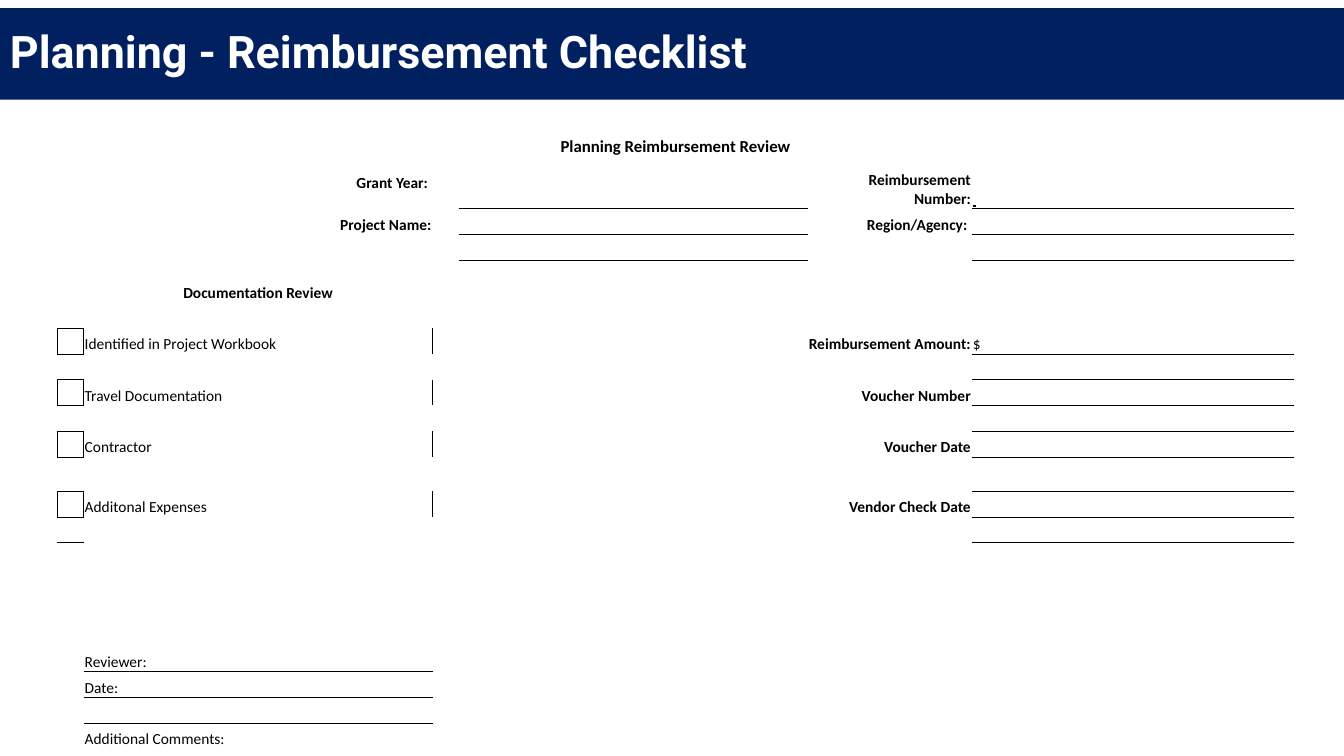
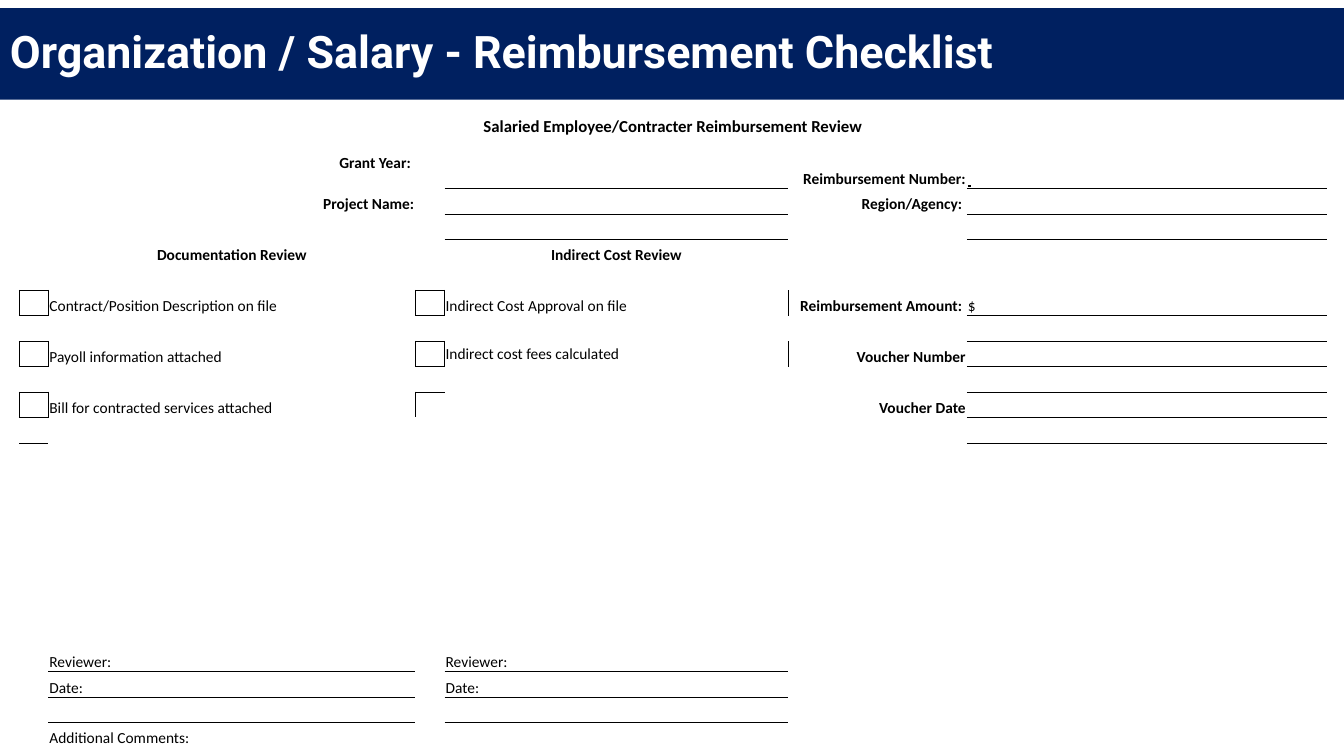
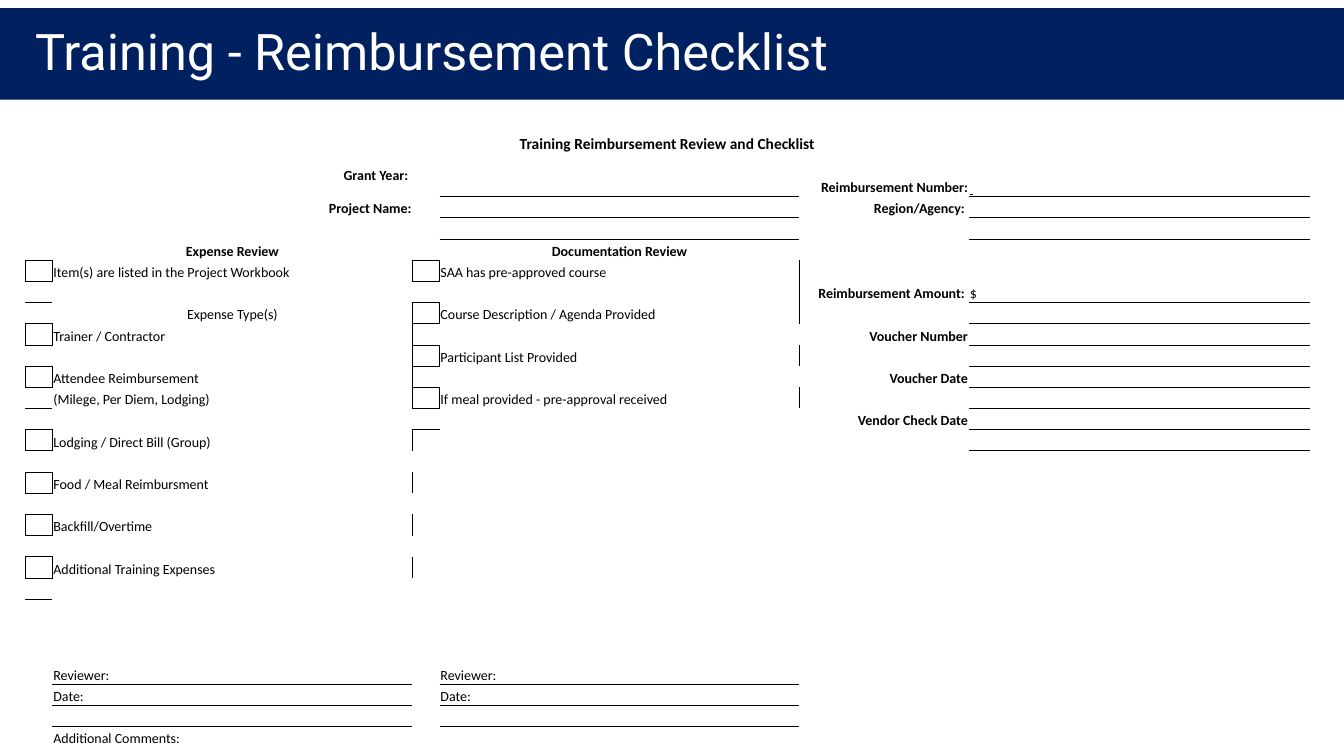
from collections import defaultdict

from lxml.etree import SubElement
from pptx import Presentation
from pptx.dml.color import RGBColor
from pptx.enum.shapes import MSO_SHAPE as Shape
from pptx.enum.text import MSO_ANCHOR as Anchor, PP_ALIGN as Align
from pptx.oxml.ns import qn
from pptx.util import Inches, Pt

NAVY = RGBColor(0x00, 0x20, 0x60)
WHITE = RGBColor(0xFF, 0xFF, 0xFF)
BLACK = RGBColor(0x00, 0x00, 0x00)
TITLE_FONT, FORM_FONT = "Roboto", "Calibri"
BAND_TOP, BAND_HEIGHT = 0.08, 0.91
NO_STYLE_ID = "{2D5ABB26-0587-4C30-8999-92F81FD0307C}"

# Table columns: check box, label, check box, label, field name, field value
BOX_COLUMNS = (0, 2)
LABEL_COLUMNS = (1, 3)
NAME, VALUE = 4, 5
AMOUNT_ROW, FIRST_FIELD_ROW, FIELD_STEP = 5, 8, 2

# "heights" holds the rows that differ; the others share what is left.
# "sections" holds, for each label column, its heading and (row, label) checks.
FORMS = [
    dict(
        title="Planning - Reimbursement Checklist",
        title_left=0, title_width=13.54, title_size=32, title_bold=True,
        heading="Planning Reimbursement Review", heading_size=12, size=11,
        at=(0.57, 1.29), height=6.14, rows=22,
        columns=(0.26, 3.46, 0.26, 3.46, 1.63, 3.19),
        heights={0: 0.27, 1: 0.51, 4: 0.42, 11: 0.34},
        sections=[
            ("Documentation Review", [
                (6, "Identified in Project Workbook"),
                (8, "Travel Documentation"),
                (10, "Contractor"),
                (12, "Additonal Expenses")]),
        ],
        fields=["Voucher Number", "Voucher Date", "Vendor Check Date"],
    ),
    dict(
        title="Organization / Salary - Reimbursement Checklist",
        title_left=0, title_width=13.54, title_size=32, title_bold=True,
        heading="Salaried Employee/Contracter Reimbursement Review",
        heading_size=12, size=11,
        at=(0.19, 1.09), height=6.34, rows=24,
        columns=(0.29, 3.64, 0.29, 3.41, 1.77, 3.57),
        heights={0: 0.27, 1: 0.51},
        sections=[
            ("Documentation Review", [
                (6, "Contract/Position Description on file"),
                (8, "Payoll information attached"),
                (10, "Bill for contracted services attached")]),
            ("Indirect Cost Review", [
                (6, "Indirect Cost Approval on file"),
                (8, "Indirect cost fees calculated")]),
        ],
        middle=[(8, 3)],
        fields=["Voucher Number", "Voucher Date"],
    ),
    dict(
        title="Training - Reimbursement Checklist",
        title_left=0.25, title_width=13.08, title_size=36, title_bold=False,
        heading="Training Reimbursement Review and Checklist",
        heading_size=11, size=10,
        at=(0.25, 1.31), height=6.11, rows=28,
        columns=(0.27, 3.57, 0.27, 3.57, 1.68, 3.38),
        heights={0: 0.22, 1: 0.42},
        sections=[
            ("Expense Review", [
                (5, "Item(s) are listed in the Project Workbook"),
                (8, "Trainer / Contractor"),
                (10, "Attendee Reimbursement"),
                (13, "Lodging / Direct Bill (Group)"),
                (15, "Food / Meal Reimbursment"),
                (17, "Backfill/Overtime"),
                (19, "Additional Training Expenses")]),
            ("Documentation Review", [
                (5, "SAA has pre-approved course"),
                (7, "Course Description / Agenda Provided"),
                (9, "Participant List Provided"),
                (11, "If meal provided - pre-approval received")]),
        ],
        plain=[(7, "Expense Type(s)", Align.CENTER),
               (11, "(Milege, Per Diem, Lodging)", Align.LEFT)],
        fields=["Voucher Number", "Voucher Date", "Vendor Check Date"],
    ),
]


def write(frame, text, *, size, font=FORM_FONT, color=BLACK, bold=False,
          underline=False, align=Align.LEFT):
    """Put one formatted paragraph in a text frame and return it."""
    para = frame.paragraphs[0]
    para.alignment = align
    span = para.add_run()
    span.text = text
    span.font.name, span.font.size = font, Pt(size)
    span.font.bold, span.font.underline = bold, underline
    span.font.color.rgb = color
    return para


def add_title(page, form):
    band = page.shapes.add_shape(Shape.RECTANGLE, 0, Inches(BAND_TOP),
                                 Inches(13.33), Inches(BAND_HEIGHT))
    band.shadow.inherit = False
    band.fill.solid()
    band.fill.fore_color.rgb = NAVY
    band.line.fill.background()

    box = page.shapes.add_textbox(
        Inches(form["title_left"]), Inches(BAND_TOP),
        Inches(form["title_width"]), Inches(BAND_HEIGHT))
    box.text_frame.word_wrap = True
    box.text_frame.vertical_anchor = Anchor.MIDDLE
    para = write(box.text_frame, form["title"], size=form["title_size"],
                 font=TITLE_FONT, color=WHITE, bold=form["title_bold"])
    para.line_spacing = 0.9


def add_grid(page, form):
    """Add the empty table with its row heights and column widths."""
    rows, heights = form["rows"], form["heights"]
    left, top = form["at"]
    frame = page.shapes.add_table(
        rows, len(form["columns"]), Inches(left), Inches(top),
        Inches(sum(form["columns"])), Inches(form["height"]))
    table = frame.table
    table.first_row = table.horz_banding = False
    table._tbl.tblPr.find(qn("a:tableStyleId")).text = NO_STYLE_ID

    for column, width in zip(table.columns, form["columns"]):
        column.width = Inches(width)
    regular = (form["height"] - sum(heights.values())) / (rows - len(heights))
    for index, row in enumerate(table.rows):
        row.height = Inches(heights.get(index, regular))

    for cell in table.iter_cells():
        cell.margin_left = cell.margin_right = cell.margin_top = Inches(0.01)
        cell.margin_bottom = 0
        cell.vertical_anchor = Anchor.BOTTOM
        cell.fill.background()
    return table


def draw_borders(table, boxes, lines):
    """Rule check boxes all round and lines below, on both cells of an edge."""
    edges = defaultdict(set)
    for row, col in boxes + lines:
        edges[row, col].add("B")
        edges[row + 1, col].add("T")
    for row, col in boxes:
        edges[row, col].update("LRT")
        edges[row - 1, col].add("B")
        edges[row, col + 1].add("L")
        if col:
            edges[row, col - 1].add("R")
    for (row, col), sides in edges.items():
        props = table.cell(row, col)._tc.get_or_add_tcPr()
        for index, side in enumerate(sorted(sides, key="LRTB".index)):
            line = SubElement(props, qn(f"a:ln{side}"), w=str(Pt(0.5)))
            fill = SubElement(line, qn("a:solidFill"))
            SubElement(fill, qn("a:srgbClr"), val=str(BLACK))
            props.insert(index, line)


def fill_form(table, form):
    boxes, lines = [], []
    size, last = form["size"], form["rows"] - 1

    def put(row, col, text, **style):
        write(table.cell(row, col).text_frame, text, **{"size": size, **style})

    def put_name(row, col, text):
        put(row, col, text, bold=True, align=Align.RIGHT)
        lines.append((row, col + (1 if col == NAME else 2)))

    # Heading and project details
    table.cell(0, 0).merge(table.cell(0, VALUE))
    put(0, 0, form["heading"], size=form["heading_size"], bold=True,
        align=Align.CENTER)
    put_name(1, 1, "Grant Year: ")
    table.cell(1, 1).vertical_anchor = Anchor.MIDDLE
    put_name(2, 1, "Project Name:")
    put_name(1, NAME, "Reimbursement Number:")
    put(1, VALUE, " ", bold=True, underline=True)
    put_name(2, NAME, "Region/Agency: ")

    # Check lists, each with its sign-off
    for box_col, col, (heading, checks) in zip(BOX_COLUMNS, LABEL_COLUMNS,
                                               form["sections"]):
        put(4, col, heading, bold=True, align=Align.CENTER)
        for row, label in checks:
            put(row, col, label)
            boxes.append((row, box_col))
        for row, label in ((last - 3, "Reviewer:"), (last - 2, "Date:")):
            put(row, col, label)
            lines.append((row, col))
    for row, text, align in form.get("plain", []):
        put(row, 1, text, align=align)
    for row, col in form.get("middle", []):
        table.cell(row, col).vertical_anchor = Anchor.MIDDLE
    put(last, 1, "Additional Comments:")

    # Payment fields
    table.cell(AMOUNT_ROW, NAME).merge(table.cell(AMOUNT_ROW + 1, NAME))
    put(AMOUNT_ROW, NAME, "Reimbursement Amount: ", bold=True,
        align=Align.RIGHT)
    put(AMOUNT_ROW + 1, VALUE, "$")
    lines.append((AMOUNT_ROW + 1, VALUE))
    for index, name in enumerate(form["fields"]):
        put_name(FIRST_FIELD_ROW + FIELD_STEP * index, NAME, name)

    # Empty cells need a small text size too, or their rows would grow
    for cell in table.iter_cells():
        para = cell.text_frame.paragraphs[0]
        if not para.runs:
            SubElement(para._p, qn("a:endParaRPr"), sz=str(size * 100))
    draw_borders(table, boxes, lines)


def main():
    deck = Presentation()
    deck.slide_width, deck.slide_height = Inches(13.33), Inches(7.5)
    for form in FORMS:
        page = deck.slides.add_slide(deck.slide_layouts[6])
        add_title(page, form)
        fill_form(add_grid(page, form), form)
    deck.save("out.pptx")


if __name__ == "__main__":
    main()
